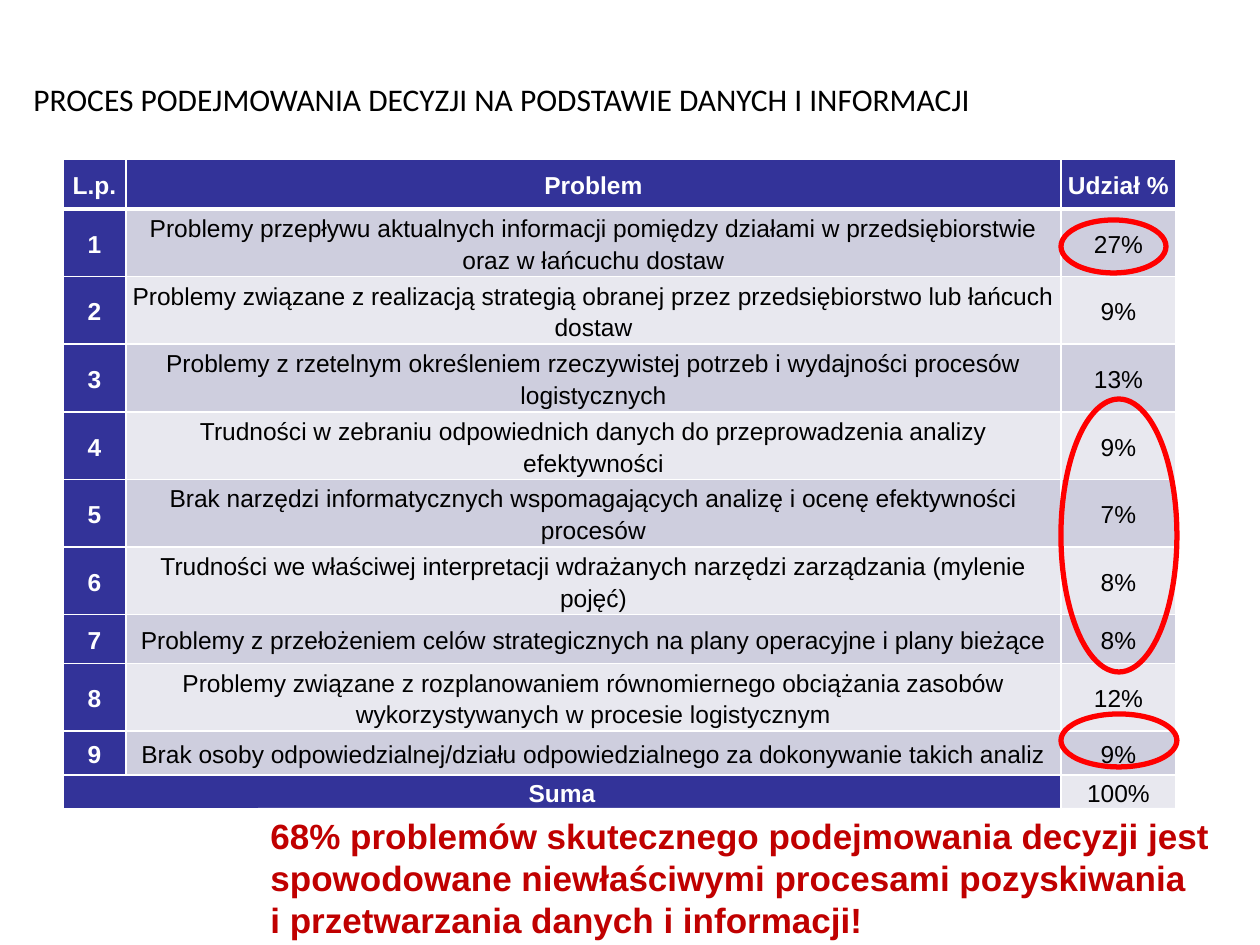
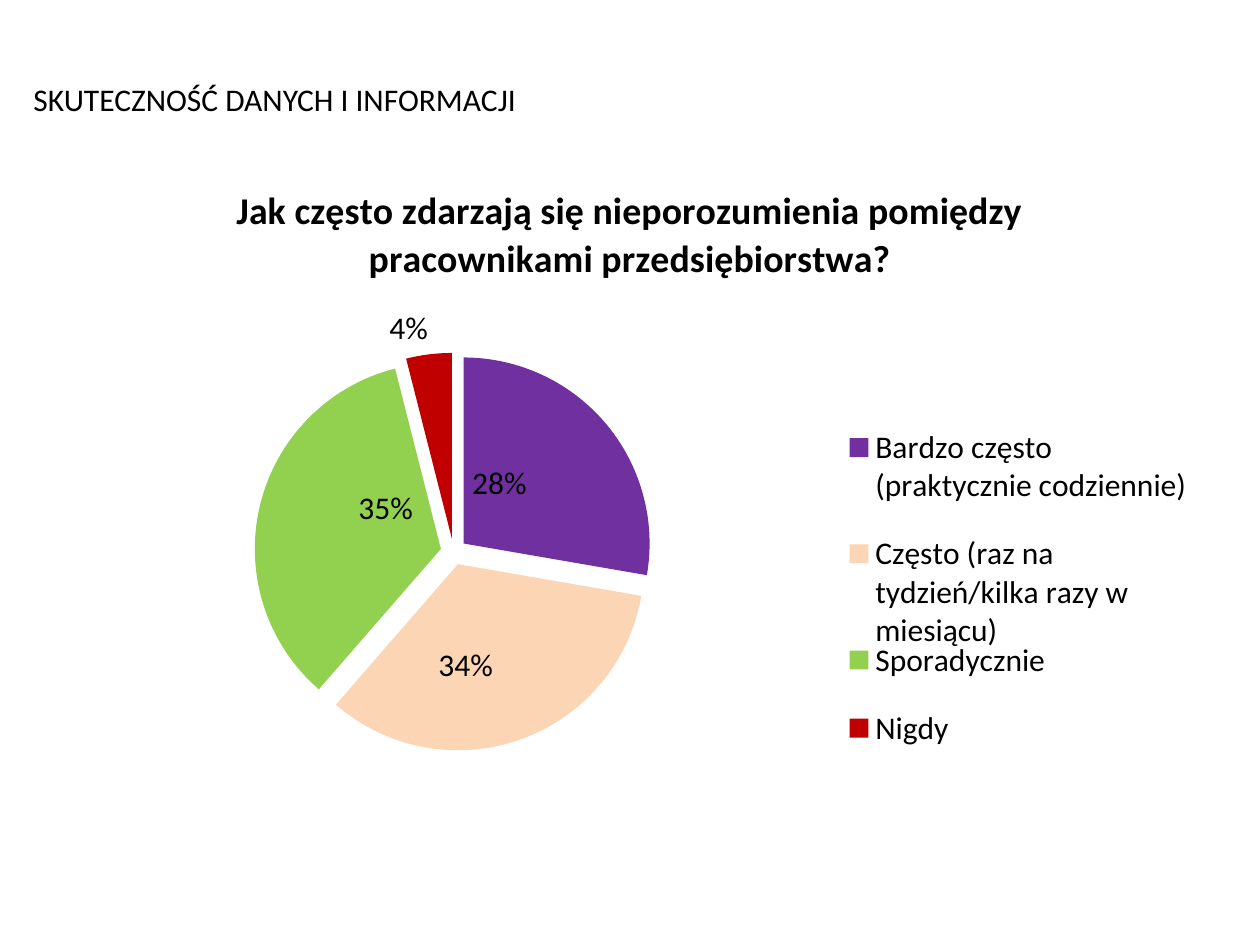
import pptx
import pptx.util
import pptx.dml.color
import pptx.chart.data
import pptx.enum.chart
import pptx.enum.shapes
import pptx.enum.text
import pptx.oxml
import pptx.oxml.ns

PX = 914400 / 126
RGB = pptx.dml.color.RGBColor
BLACK = RGB(0, 0, 0)
WHITE = RGB(255, 255, 255)
NAVY = RGB(0x33, 0x33, 0x99)
BAND_DARK = RGB(0xCE, 0xCE, 0xDE)
BAND_LIGHT = RGB(0xE8, 0xE8, 0xEF)
RED = RGB(255, 0, 0)
DARK_RED = RGB(0xC0, 0, 0)
SLICE_COLORS = [RGB(0x70, 0x30, 0xA0), RGB(0xFC, 0xD5, 0xB5), RGB(0x92, 0xD0, 0x50), DARK_RED]
Pt = pptx.util.Pt
CENTER = pptx.enum.text.PP_ALIGN.CENTER
SHAPE = pptx.enum.shapes.MSO_SHAPE


def px(*lengths):
    return [pptx.util.Emu(round(n * PX)) for n in lengths]


def add_run(p, text, size, font, color, bold=False):
    r = p.add_run()
    r.text = text
    r.font.size = Pt(size)
    r.font.name = font
    r.font.color.rgb = color
    r.font.bold = bold


prs = pptx.Presentation()
prs.slide_width, prs.slide_height = px(1260, 945)

slides = []
for title, width in [
    ("PROCES PODEJMOWANIA DECYZJI NA PODSTAWIE DANYCH I INFORMACJI", 1239),
    ("SKUTECZNOŚĆ DANYCH I INFORMACJI", 987),
]:
    s = prs.slides.add_slide(prs.slide_layouts[6])
    tf = s.shapes.add_textbox(*px(21, 74, width, 50)).text_frame
    tf.word_wrap = True
    add_run(tf.paragraphs[0], title, 18, "Calibri", BLACK)
    slides.append(s)

s = slides[0]
problems = [
    ("Problemy przepływu aktualnych informacji pomiędzy działami w przedsiębiorstwie oraz w łańcuchu dostaw", "27%"),
    ("Problemy związane z realizacją strategią obranej przez przedsiębiorstwo lub łańcuch dostaw", "9%"),
    ("Problemy z rzetelnym określeniem rzeczywistej potrzeb i wydajności procesów logistycznych", "13%"),
    ("Trudności w zebraniu odpowiednich danych do przeprowadzenia analizy efektywności", "9%"),
    ("Brak narzędzi informatycznych wspomagających analizę i ocenę efektywności procesów", "7%"),
    ("Trudności we właściwej interpretacji wdrażanych narzędzi zarządzania (mylenie pojęć)", "8%"),
    ("Problemy z przełożeniem celów strategicznych na plany operacyjne i plany bieżące", "8%"),
    ("Problemy związane z rozplanowaniem równomiernego obciążania zasobów wykorzystywanych w procesie logistycznym", "12%"),
    ("Brak osoby odpowiedzialnej/działu odpowiedzialnego za dokonywanie takich analiz", "9%"),
]
rows = [("L.p.", "Problem", "Udział %")]
rows += [(str(n), *problem) for n, problem in enumerate(problems, 1)]
rows.append(("Suma", "", "100%"))
last = len(rows) - 1

table = s.shapes.add_table(len(rows), 3, *px(63, 159, 1113, 650)).table
for column, width in zip(table.columns, px(63, 935, 115)):
    column.width = width
for row, height in zip(table.rows, px(50, 48, 43, 48, 35, 40, 44, 49, 63, 44, 26)):
    row.height = height
table.cell(last, 0).merge(table.cell(last, 1))

for i, row in enumerate(rows):
    for j, text in enumerate(row):
        cell = table.cell(i, j)
        tcPr = cell._tc.get_or_add_tcPr()
        for side in "LRTB":
            heavy = (i, side) in [(0, "B"), (1, "T")]
            tcPr.append(pptx.oxml.parse_xml(
                f'<a:ln{side} {pptx.oxml.ns.nsdecls("a")} w="{38100 if heavy else 12700}">'
                f'<a:solidFill><a:srgbClr val="{WHITE}"/></a:solidFill></a:ln{side}>'))
        strong = i == 0 or j == 0
        cell.fill.solid()
        cell.fill.fore_color.rgb = NAVY if strong else BAND_DARK if i % 2 else BAND_LIGHT
        cell.margin_left, cell.margin_right, cell.margin_top, cell.margin_bottom = px(6, 6, 0, 0)
        cell.vertical_anchor = pptx.enum.text.MSO_ANCHOR.MIDDLE
        if not text:
            continue
        p = cell.text_frame.paragraphs[0]
        p.alignment = CENTER
        p.line_spacing = 1.15
        add_run(p, text, 14, "Arial", WHITE if strong else BLACK, strong)

for top, width, height in [(220, 105, 53), (399, 116, 273), (714, 116, 53)]:
    sp = s.shapes.add_shape(SHAPE.OVAL, *px(1061, top, width, height))
    sp.shadow.inherit = False
    sp.fill.background()
    sp.line.color.rgb = RED
    sp.line.width = Pt(3)

sp = s.shapes.add_shape(SHAPE.RECTANGLE, *px(258, 808, 1002, 140))
sp.shadow.inherit = False
sp.fill.solid()
sp.fill.fore_color.rgb = WHITE
sp.line.fill.background()
tf = sp.text_frame
tf.word_wrap = True
tf.vertical_anchor = pptx.enum.text.MSO_ANCHOR.TOP
p = tf.paragraphs[0]
p.alignment = pptx.enum.text.PP_ALIGN.LEFT
add_run(p, "68% problemów skutecznego podejmowania decyzji jest spowodowane "
        "niewłaściwymi procesami pozyskiwania ", 20, "Arial", DARK_RED, True)
p.add_line_break()
add_run(p, "i przetwarzania danych i informacji!", 20, "Arial", DARK_RED, True)

s = slides[1]
data = pptx.chart.data.CategoryChartData()
data.categories = [
    "Bardzo często (praktycznie codziennie)",
    "Często (raz na tydzień/kilka razy w miesiącu)",
    "Sporadycznie",
    "Nigdy",
]
data.add_series("Series 1", [28, 34, 35, 4])
chart = s.shapes.add_chart(
    pptx.enum.chart.XL_CHART_TYPE.PIE, *px(42, 157, 1176, 653), data).chart
chart.font.size = Pt(18)
chart.font.name = "Calibri"
chart.font.color.rgb = BLACK
chart.has_title = True
add_run(chart.chart_title.text_frame.paragraphs[0],
        "Jak często zdarzają się nieporozumienia pomiędzy pracownikami przedsiębiorstwa?",
        21.6, "Calibri", BLACK, True)
chart.chart_title.include_in_layout = False
chart.has_legend = True
chart.legend.position = pptx.enum.chart.XL_LEGEND_POSITION.RIGHT
chart.legend.include_in_layout = False

plot = chart.plots[0]
plot.vary_by_categories = True
series = plot.series[0]
C_NS = pptx.oxml.ns.nsdecls("c")
series._element.find(pptx.oxml.ns.qn("c:tx")).addnext(
    pptx.oxml.parse_xml(f'<c:explosion {C_NS} val="7"/>'))

plot.has_data_labels = True
plot.data_labels.show_percentage = True
plot.data_labels.show_value = False
plot.data_labels.number_format = "0%"
plot.data_labels.number_format_is_linked = False

LABEL = pptx.enum.chart.XL_LABEL_POSITION
labels = [
    (LABEL.CENTER, -0.03, 0),
    (LABEL.CENTER, -0.02, 0.02),
    (LABEL.CENTER, 0.03, -0.03),
    (LABEL.OUTSIDE_END, 0, 0),
]
for i, (color, (position, dx, dy)) in enumerate(zip(SLICE_COLORS, labels)):
    point = series.points[i]
    point.format.fill.solid()
    point.format.fill.fore_color.rgb = color
    point.data_label.position = position
    dLbl = point.data_label._get_or_add_dLbl()
    dLbl.find(pptx.oxml.ns.qn("c:showVal")).set("val", "0")
    dLbl.find(pptx.oxml.ns.qn("c:showPercent")).set("val", "1")
    dLbl.find(pptx.oxml.ns.qn("c:idx")).addnext(pptx.oxml.parse_xml(
        f'<c:layout {C_NS}><c:manualLayout><c:x val="{dx}"/><c:y val="{dy}"/>'
        '</c:manualLayout></c:layout>'))

plot_area = chart._chartSpace.chart.plotArea
legend = chart.legend._element
for parent, target, (x, y, w, h) in [
    (plot_area, '<c:layoutTarget val="inner"/>', (0.18, 0.3, 0.34, 0.61)),
    (legend, "", (0.68, 0.37, 0.3, 0.58)),
]:
    for old in parent.findall(pptx.oxml.ns.qn("c:layout")):
        parent.remove(old)
    layout = pptx.oxml.parse_xml(
        f'<c:layout {C_NS}><c:manualLayout>{target}<c:xMode val="edge"/><c:yMode val="edge"/>'
        f'<c:x val="{x}"/><c:y val="{y}"/><c:w val="{w}"/><c:h val="{h}"/>'
        '</c:manualLayout></c:layout>')
    parent.insert(1 if parent is legend else 0, layout)

prs.save("out.pptx")
